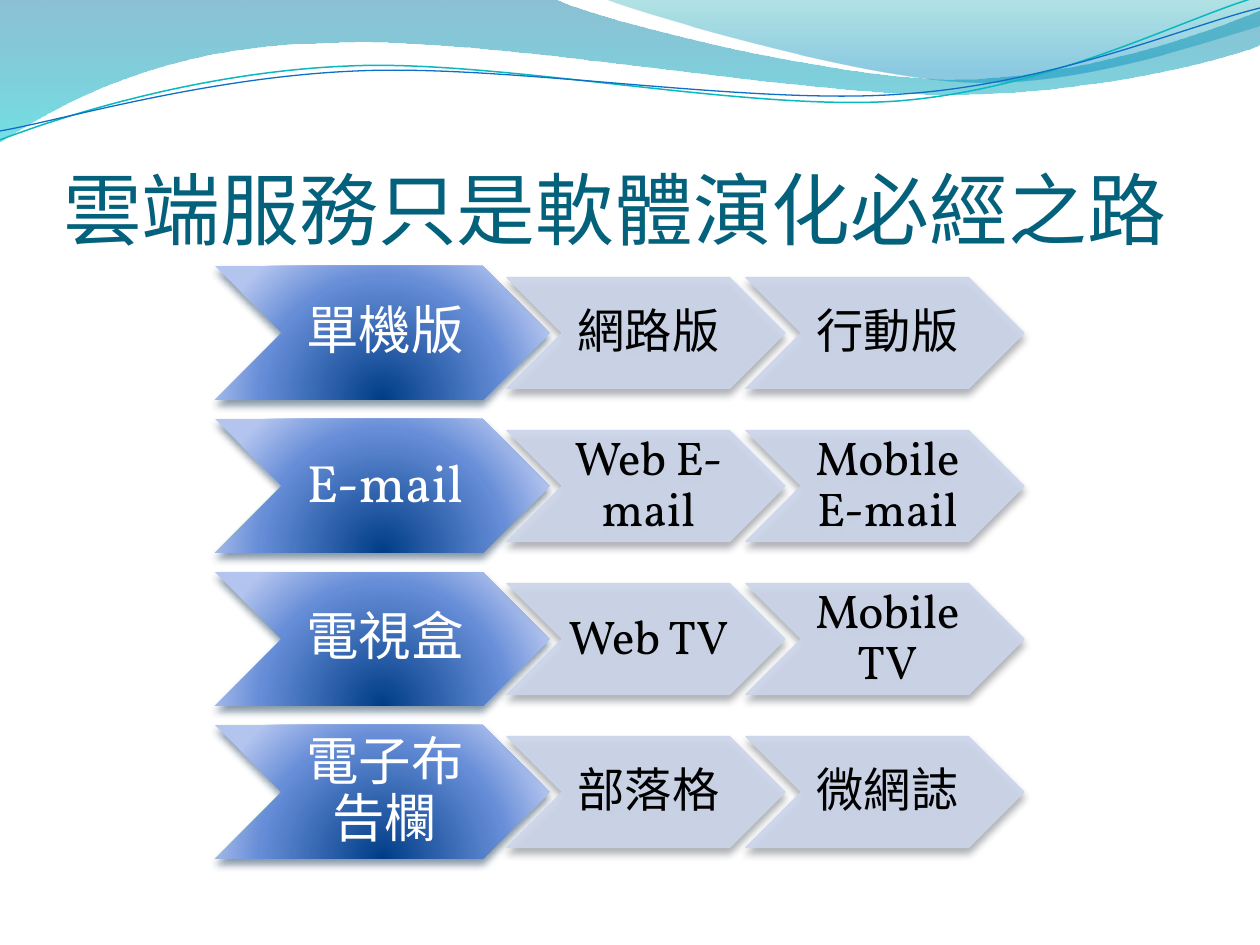
from math import cos, radians, sin

from pptx import Presentation
from pptx.dml.color import RGBColor as RGB
from pptx.enum.shapes import MSO_SHAPE as SHAPE
from pptx.enum.text import MSO_ANCHOR as ANCHOR, PP_ALIGN as ALIGN
from pptx.oxml import parse_xml
from pptx.oxml.ns import nsdecls, qn
from pptx.util import Pt

PX = 7257  # EMU per px, 126 px to the inch

# Content
TITLE = "雲端服務只是軟體演化必經之路"
ROWS = [
    ("單機版", "網路版", "行動版"),
    ("E-mail", "Web E-mail", "Mobile E-mail"),
    ("電視盒", "Web TV", "Mobile TV"),
    ("電子布告欄", "部落格", "微網誌"),
]

THEME = {
    "title": ("Calibri", 45, "04617B"),
    "lead": ("Vollkorn", 30, "FFFFFF"),
    "step": ("Vollkorn", 27, "000000"),
    "lead_stops": [(0, "003D87", 100), (68, "668DD7", 100), (100, "B3C4EF", 100)],
    "step_fill": ("CCD5EA", 90),
    "lead_shadow": "042747",
    "step_shadow": "474B53",
    "wave_back": [(0, "0074A1", 45), (100, "00C6CF", 55)],
    "wave_front": [(0, "00A1A9", 30), (80, "008BBF", 45)],
    "strand_teal": ("0AB8BF", 0.85),
    "strand_blue": ("0F6FC6", 0.75),
}
DOWN = '<a:lin ang="5400000" scaled="0"/>'
GLOW = ('<a:path path="circle"><a:fillToRect l="50000" t="130000" '
        'r="50000" b="-30000"/></a:path>')

# Waves: box, then steps; a pair is a straight step, six numbers are a Bezier curve
WAVES = [
    ((-1, -1, 1262, 143),
     [(0, 0), (554, -1), (600, 21, 837, 79, 955, 79), (1075, 79, 1207, 33, 1260, 11),
      (1261, 45), (1239, 55, 1096, 96, 940, 94), (784, 94, 481, 35, 324, 43),
      (163, 45, 58, 105, -1, 142)], THEME["wave_back"]),
    ((604, -1, 656, 88),
     [(604, -1), (641, 14, 859, 78, 969, 82), (1079, 87, 1211, 40, 1260, 26),
      (1260, 0)], THEME["wave_front"]),
]
STRAND_TILT = -2.7
STRANDS = [
    ((-3, 28, 1262, 89),
     [(0, 140), (60, 117, 199, 72, 349, 66), (498, 59, 747, 112, 898, 101),
      (1050, 89, 1182, 19, 1257, -3)], THEME["strand_teal"]),
    ((-3, 38, 1263, 73),
     [(0, 131), (59, 121, 207, 77, 357, 71), (508, 64, 752, 106, 903, 94),
      (1053, 84, 1186, 26, 1260, 8)], THEME["strand_blue"]),
]

# Chevron grid, px
ROW_MID, ROW_PITCH = 333, 153
LEAD_X, LEAD_W, LEAD_H = 215, 335, 134
STEP_X, STEP_PITCH, STEP_W, STEP_H = 507, 239, 278, 111


def color_xml(color, alpha):
    return f'<a:srgbClr val="{color}"><a:alpha val="{alpha * 1000}"/></a:srgbClr>'


def fill_gradient(sp, stops, direction):
    sp.fill.gradient()
    old = sp._element.spPr.find(qn("a:gradFill"))
    gs = "".join(f'<a:gs pos="{pos * 1000}">{color_xml(color, alpha)}</a:gs>'
                 for pos, color, alpha in stops)
    old.getparent().replace(old, parse_xml(
        f'<a:gradFill {nsdecls("a")} rotWithShape="1"><a:gsLst>{gs}</a:gsLst>'
        f'{direction}</a:gradFill>'))


def fill_solid(fill, color, alpha):
    fill.solid()
    fill.fore_color.rgb = RGB.from_string(color)
    fill._xPr.find(qn("a:solidFill"))[0].append(
        parse_xml(f'<a:alpha {nsdecls("a")} val="{alpha * 1000}"/>'))


def add_shadow(sp, color):
    sp.shadow.inherit = False
    sp._element.spPr.find(qn("a:effectLst")).append(parse_xml(
        f'<a:outerShdw {nsdecls("a")} blurRad="57150" dist="38100" dir="5400000" '
        f'algn="ctr" rotWithShape="0">{color_xml(color, 48)}</a:outerShdw>'))


def write(tf, text, style, align):
    font, size, color = style
    p = tf.paragraphs[0]
    p.alignment = align
    r = p.add_run()
    r.text = text
    r.font.name, r.font.size = font, Pt(size)
    r.font.color.rgb = RGB.from_string(color)
    return p


def add_path(shapes, box, steps, close, tilt=0):
    """Freeform with true curves; steps are given as they lie after the tilt."""
    x, y, w, h = box
    builder = shapes.build_freeform(*steps[0], scale=PX)
    builder.add_line_segments([step[-2:] for step in steps[1:]], close=close)
    sp = builder.convert_to_shape()
    sp.left, sp.top, sp.width, sp.height = (v * PX for v in box)
    sp.rotation = tilt
    sp.shadow.inherit = False
    c, s = cos(radians(tilt)), sin(radians(tilt))

    def point(px, py):
        dx, dy = px - x - w / 2, py - y - h / 2
        lx, ly = c * dx + s * dy + w / 2, c * dy - s * dx + h / 2
        return f'<a:pt x="{round(lx * PX)}" y="{round(ly * PX)}"/>'

    outline = sp._element.spPr.find(".//" + qn("a:pathLst"))[0]
    outline.set("w", str(w * PX))
    outline.set("h", str(h * PX))
    for old, step in zip(list(outline), steps):
        tag = "moveTo" if step is steps[0] else "lnTo" if len(step) == 2 else "cubicBezTo"
        pts = "".join(point(*pair) for pair in zip(step[::2], step[1::2]))
        outline.replace(old, parse_xml(f'<a:{tag} {nsdecls("a")}>{pts}</a:{tag}>'))
    return sp


def add_chevron(shapes, text, x, mid, w, h, style):
    sp = shapes.add_shape(SHAPE.CHEVRON, x * PX, round((mid - h / 2) * PX), w * PX, h * PX)
    tf = sp.text_frame
    tf.word_wrap = True
    tf.vertical_anchor = ANCHOR.MIDDLE
    tf.margin_left, tf.margin_right = 5 * PX, 0
    tf.margin_top = tf.margin_bottom = 3 * PX
    write(tf, text, style, ALIGN.CENTER).line_spacing = 0.9
    return sp


def main():
    prs = Presentation()
    prs.slide_width, prs.slide_height = 1260 * PX, 945 * PX
    slide = prs.slides.add_slide(prs.slide_layouts[5])
    shapes = slide.shapes

    # Waves across the top
    for box, steps, stops in WAVES:
        sp = add_path(shapes, box, steps, True)
        fill_gradient(sp, stops, DOWN)
        sp.line.fill.background()
    for box, steps, (color, width) in STRANDS:
        sp = add_path(shapes, box, steps, False, STRAND_TILT)
        sp.fill.background()
        sp.line.color.rgb = RGB.from_string(color)
        sp.line.width = Pt(width)

    # Title
    title = shapes.title
    title.left, title.top, title.width, title.height = (v * PX for v in (63, 97, 1134, 158))
    tf = title.text_frame
    tf.vertical_anchor = ANCHOR.BOTTOM
    tf.margin_left = tf.margin_right = tf.margin_bottom = 0
    tf.margin_top = 6 * PX
    write(tf, TITLE, THEME["title"], ALIGN.LEFT)

    # One lead chevron and its steps per row
    for i, (lead, *steps) in enumerate(ROWS):
        mid = ROW_MID + i * ROW_PITCH
        sp = add_chevron(shapes, lead, LEAD_X, mid, LEAD_W, LEAD_H, THEME["lead"])
        fill_gradient(sp, THEME["lead_stops"], GLOW)
        sp.line.fill.background()
        add_shadow(sp, THEME["lead_shadow"])
        for j, step in enumerate(steps):
            sp = add_chevron(shapes, step, STEP_X + j * STEP_PITCH, mid,
                             STEP_W, STEP_H, THEME["step"])
            fill_solid(sp.fill, *THEME["step_fill"])
            fill_solid(sp.line.fill, *THEME["step_fill"])
            sp.line.width = Pt(0.75)
            add_shadow(sp, THEME["step_shadow"])

    prs.save("out.pptx")


if __name__ == "__main__":
    main()
